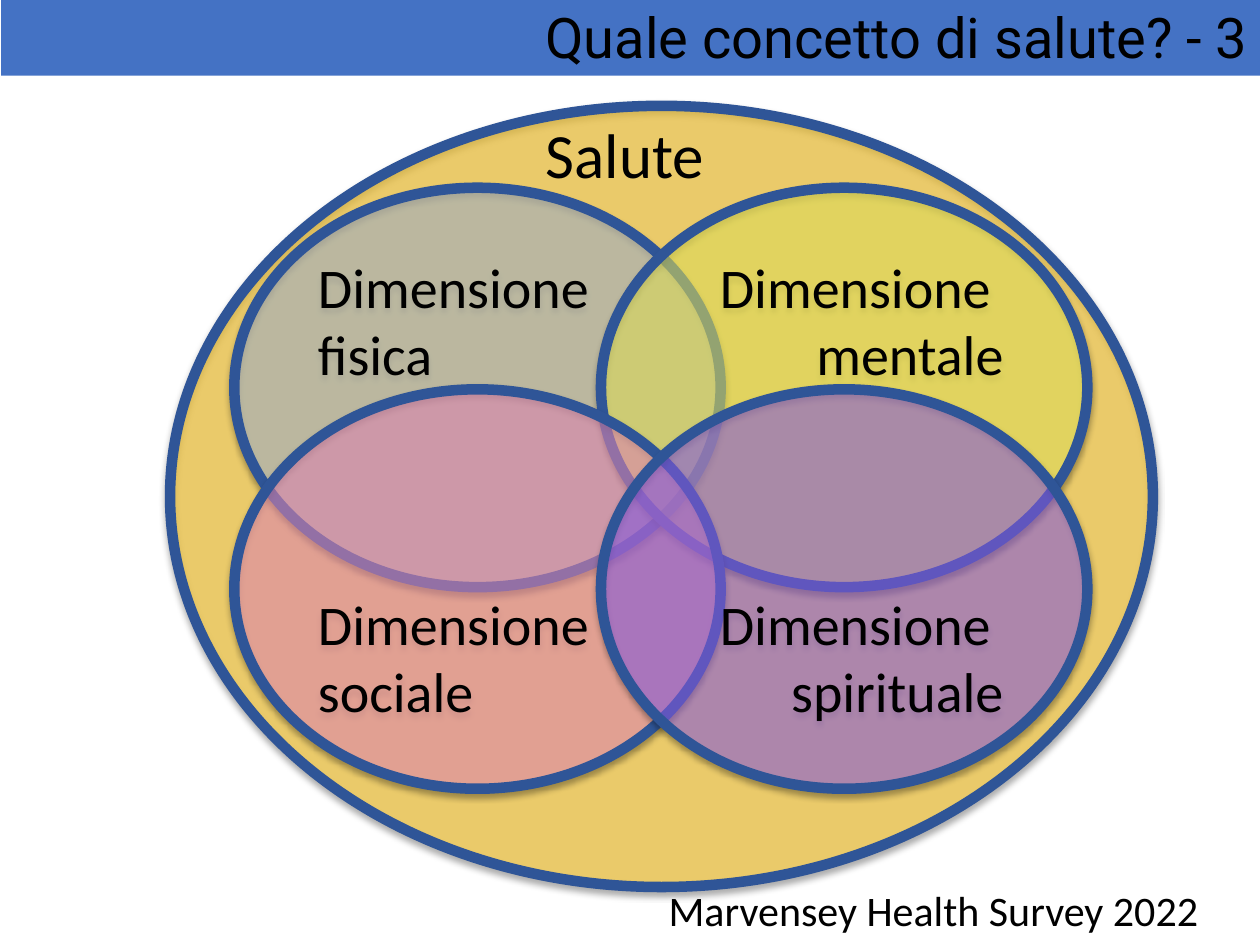
from dataclasses import dataclass

from lxml import etree
from pptx import Presentation
from pptx.dml.color import RGBColor
from pptx.enum.shapes import MSO_SHAPE
from pptx.enum.text import MSO_ANCHOR, MSO_AUTO_SIZE, PP_ALIGN
from pptx.oxml.ns import qn
from pptx.util import Inches, Pt

OVAL = MSO_SHAPE.OVAL
TOP, MIDDLE, BOTTOM = MSO_ANCHOR.TOP, MSO_ANCHOR.MIDDLE, MSO_ANCHOR.BOTTOM
LEFT, RIGHT = PP_ALIGN.LEFT, PP_ALIGN.RIGHT


@dataclass(frozen=True)
class Theme:
    band: str = "4472C4"
    outline: str = "2F5597"
    ink: str = "000000"
    health: str = "FFC000"
    physical: str = "B4C7E7"
    mental: str = "FFFF66"
    social: str = "FF99CC"
    spiritual: str = "9966FF"
    title_font: str = "Roboto"
    body_font: str = "Calibri"
    title_size: int = 32
    label_size: int = 32
    heading_size: int = 36
    source_size: int = 24
    outline_width: int = 6
    opacity: int = 50


THEME = Theme()
SET_COLUMNS = (1.86, 4.77)
SET_ROWS = (1.49, 3.09)
SET_SIZE = (3.86, 3.17)


def place(left, top, width, height):
    return [Inches(value) for value in (left, top, width, height)]


def write(shape, text, size, align, anchor, font=THEME.body_font):
    frame = shape.text_frame
    frame.word_wrap = True
    frame.auto_size = MSO_AUTO_SIZE.NONE
    frame.vertical_anchor = anchor
    para = frame.paragraphs[0]
    para.text = text
    para.alignment = align
    para.font.name = font
    para.font.size = Pt(size)
    para.font.color.rgb = RGBColor.from_string(THEME.ink)


def add_alpha(color, percent):
    etree.SubElement(color, qn("a:alpha"), val=str(percent * 1000))


def add_soft_shadow(shape):
    shape.shadow.inherit = False
    effects = shape._element.spPr.find(qn("a:effectLst"))
    shadow = etree.SubElement(
        effects, qn("a:outerShdw"), blurRad=str(Pt(3.5)), dist=str(Pt(2.2)),
        dir="5400000", rotWithShape="0")
    add_alpha(etree.SubElement(shadow, qn("a:srgbClr"), val="000000"), 32)


def add_ellipse(page, box, color):
    """Add a half-transparent set of the Venn diagram."""
    ellipse = page.shapes.add_shape(OVAL, *place(*box))
    ellipse.fill.solid()
    ellipse.fill.fore_color.rgb = RGBColor.from_string(color)
    fill = ellipse._element.spPr.find(qn("a:solidFill"))
    add_alpha(fill.find(qn("a:srgbClr")), THEME.opacity)
    ellipse.line.color.rgb = RGBColor.from_string(THEME.outline)
    ellipse.line.width = Pt(THEME.outline_width)
    add_soft_shadow(ellipse)
    return ellipse


def add_dimension(page, column, row, name, color):
    """Add one inner set, its label pushed to the outer corner of the grid."""
    box = (SET_COLUMNS[column], SET_ROWS[row], *SET_SIZE)
    ellipse = add_ellipse(page, box, color)
    write(ellipse, f"Dimensione \v{name}", THEME.label_size,
          (LEFT, RIGHT)[column], (TOP, BOTTOM)[row])


def add_label(page, box, text, size):
    write(page.shapes.add_textbox(*place(*box)), text, size, RIGHT, TOP)


def format_title(page, text):
    title = page.shapes.title
    title.left, title.top, title.width, title.height = place(0.01, -0.03, 10, 0.63)
    title.fill.solid()
    title.fill.fore_color.rgb = RGBColor.from_string(THEME.band)
    write(title, text, THEME.title_size, RIGHT, MIDDLE, THEME.title_font)


def main():
    deck = Presentation()
    deck.slide_width, deck.slide_height = Inches(10), Inches(7.5)
    page = deck.slides.add_slide(deck.slide_layouts[5])

    format_title(page, "Quale concetto di salute? - 3")
    add_ellipse(page, (1.35, 0.84, 7.8, 6.2), THEME.health)
    dimensions = (("fisica", THEME.physical), ("mentale", THEME.mental),
                  ("sociale", THEME.social), ("spirituale", THEME.spiritual))
    for index, (name, color) in enumerate(dimensions):
        row, column = divmod(index, 2)
        add_dimension(page, column, row, name, color)
    add_label(page, (4.61, 6.97, 5, 0.51), "Marvensey Health Survey 2022",
              THEME.source_size)
    add_label(page, (3.91, 0.87, 1.89, 0.71), "Salute ", THEME.heading_size)

    deck.save("out.pptx")


if __name__ == "__main__":
    main()
